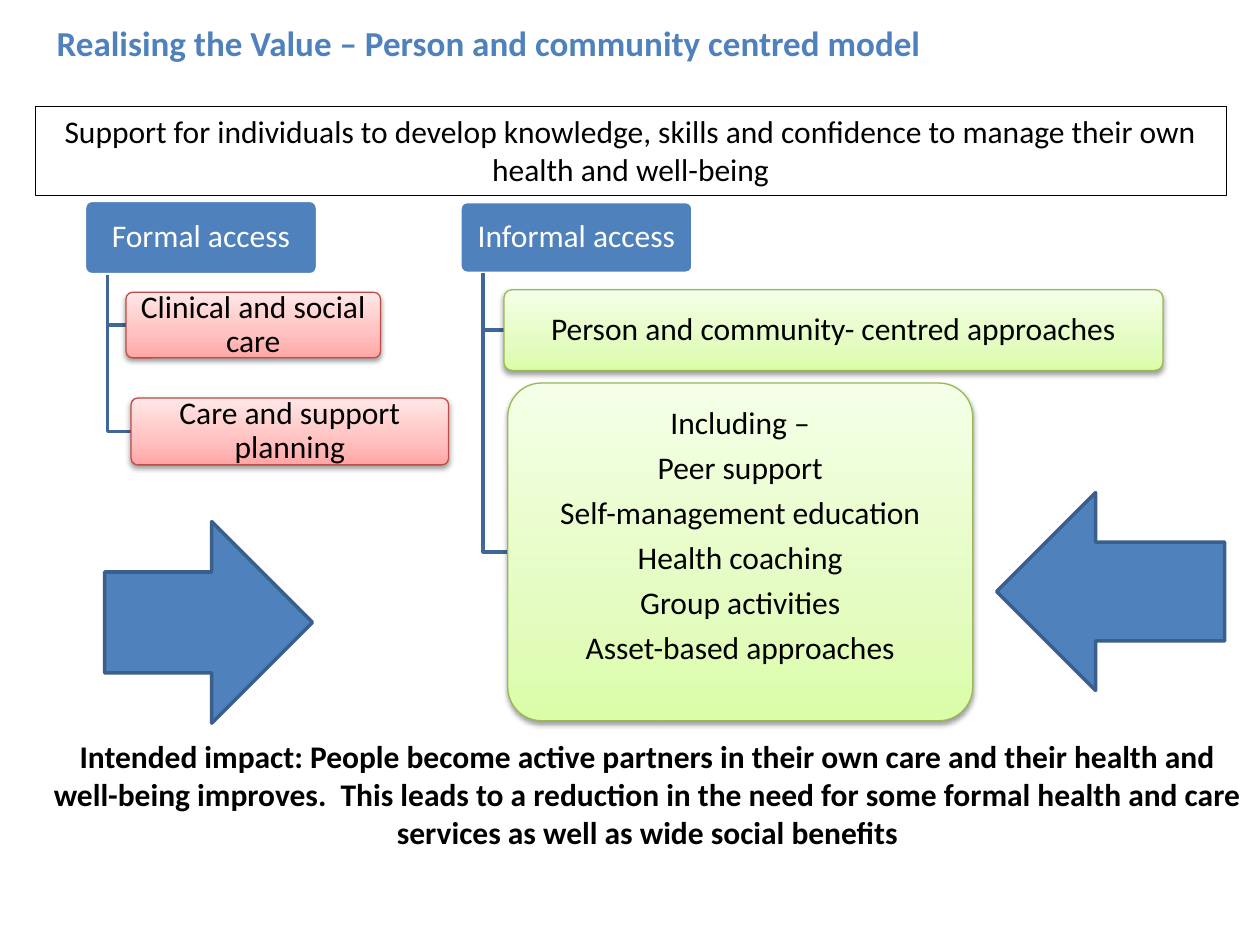
from lxml import etree
from pptx import Presentation
from pptx.dml.color import RGBColor
from pptx.enum.shapes import MSO_SHAPE
from pptx.enum.text import MSO_ANCHOR, PP_ALIGN
from pptx.oxml.ns import qn
from pptx.util import Inches, Pt

RECT, ROUND = MSO_SHAPE.RECTANGLE, MSO_SHAPE.ROUNDED_RECTANGLE
RIGHT, LEFT_ARROW = MSO_SHAPE.RIGHT_ARROW, MSO_SHAPE.LEFT_ARROW
TOP, MIDDLE = MSO_ANCHOR.TOP, MSO_ANCHOR.MIDDLE
LEFT, CENTER = PP_ALIGN.LEFT, PP_ALIGN.CENTER

THEME = {
    "font": "Calibri", "title_size": 20, "size": 18,
    "blue": "4F81BD", "blue_edge": "3A5F8C", "branch": "3F6797",
    "white": "FFFFFF", "black": "000000",
    # gradient stops run from the bottom of the box to its top
    "red": {"stops": [(0, "FFA6A5"), (35, "FFC0BF"), (100, "FFE7E7")], "edge": "BF4C48"},
    "green": {"stops": [(0, "DAFDA7"), (35, "E4FCC2"), (100, "F5FFE7")], "edge": "98B955"},
}

TITLE = "Realising the Value – Person and community centred model"
AIM = ("Support for individuals to develop knowledge, skills and confidence "
       "to manage their own health and well-being")
IMPACT = ("Intended impact: People become active partners in their own care and their "
          "health and well-being improves.  This leads to a reduction in the need for some "
          "formal health and care services as well as wide social benefits")
# Boxes are (left, top, width, height) in inches
BRANCHES = [
    {"head": "Formal access", "box": (0.67, 1.59, 1.85, 0.59), "look": "red", "children": [
        (["Clinical and social care"], (1, 2.32, 2.02, 0.52), 0.03),
        (["Care and support planning"], (1.04, 3.16, 2.52, 0.53), 0.03)]},
    {"head": "Informal access", "box": (3.65, 1.6, 1.85, 0.57), "look": "green", "children": [
        (["Person and community- centred approaches"], (4, 2.3, 5.23, 0.64), 0.03),
        (["Including –", "Peer support", "Self-management education", "Health coaching",
          "Group activities", "Asset-based approaches"], (4.03, 3.04, 3.69, 2.68), 0.27)]},
]
ARROWS = [(RIGHT, (0.83, 4.14, 1.65, 1.6)), (LEFT_ARROW, (7.91, 3.91, 1.81, 1.57))]


def rgb(name):
    return RGBColor.from_string(THEME.get(name, name))


def inches(box):
    return [Inches(v) for v in box]


def write(sp, lines, color="black", size=THEME["size"], bold=False, align=CENTER,
          anchor=TOP, insets=(0.1, 0.05, 0.1, 0.05), line=1, after=0):
    tf = sp.text_frame
    tf.word_wrap = True
    tf.vertical_anchor = anchor
    tf.margin_left, tf.margin_top, tf.margin_right, tf.margin_bottom = inches(insets)
    for i, text in enumerate(lines):
        p = tf.paragraphs[0] if i == 0 else tf.add_paragraph()
        p.alignment, p.line_spacing = align, line
        p.space_before, p.space_after = Pt(0), Pt(after)
        r = p.add_run()
        r.text = text
        r.font.name, r.font.size, r.font.bold = THEME["font"], Pt(size), bold
        r.font.color.rgb = rgb(color)


def add_shape(kind, box, fill, edge, weight):
    sp = slide.shapes.add_shape(kind, *inches(box))
    sp.shadow.inherit = False
    if fill:
        sp.fill.solid()
        sp.fill.fore_color.rgb = rgb(fill)
    else:
        sp.fill.background()
    sp.line.color.rgb, sp.line.width = rgb(edge), Pt(weight)
    if kind == ROUND:
        sp.adjustments[0] = 0.1
    return sp


def add_color(parent, color):
    return etree.SubElement(parent, qn("a:srgbClr"), val=color)


def shade(sp, stops):
    """Give the shape a vertical gradient and a soft shadow below."""
    sp.fill.gradient()
    sp.fill.gradient_angle = 90
    props = sp._element.spPr
    gs_list = props.find(".//" + qn("a:gsLst"))
    for gs in list(gs_list):
        gs_list.remove(gs)
    for share, color in stops:
        add_color(etree.SubElement(gs_list, qn("a:gs"), pos=str(share * 1000)), color)
    shadow = etree.SubElement(props.find(qn("a:effectLst")), qn("a:outerShdw"),
                              blurRad=str(Pt(3.1)), dist=str(Pt(1.6)),
                              dir="5400000", rotWithShape="0")
    etree.SubElement(add_color(shadow, THEME["black"]), qn("a:alpha"), val="38000")


def add_elbow(parent, child):
    """Run from a tenth along the parent's base to the middle of the child's left side."""
    x, y = parent[0] + parent[2] / 10, parent[1] + parent[3]
    end_x, end_y = child[0], child[1] + child[3] / 2
    pen = slide.shapes.build_freeform(Inches(x), Inches(y))
    pen.add_line_segments([inches((x, end_y)), inches((end_x, end_y))], close=False)
    sp = pen.convert_to_shape()
    sp.shadow.inherit = False
    sp.fill.background()
    sp.line.color.rgb, sp.line.width = rgb("branch"), Pt(2)


def add_node(lines, box, fill, edge, weight, color="black", bottom=0.03):
    sp = add_shape(ROUND, box, fill, edge, weight)
    write(sp, lines, color=color, anchor=MIDDLE, insets=(0.04, 0.03, 0.04, bottom),
          line=0.9, after=0.35 * THEME["size"])
    return sp


prs = Presentation()
prs.slide_width, prs.slide_height = Inches(10), Inches(7.5)
slide = prs.slides.add_slide(prs.slide_layouts[5])

title = slide.shapes.title
title.left, title.top, title.width, title.height = inches((0.35, 0.12, 7.87, 0.44))
write(title, [TITLE], color="blue", size=THEME["title_size"], bold=True, align=LEFT)

for branch in BRANCHES:
    add_node([branch["head"]], branch["box"], "blue", "white", 2, color="white")
    look = THEME[branch["look"]]
    for lines, box, bottom in branch["children"]:
        add_elbow(branch["box"], box)
        node = add_node(lines, box, None, look["edge"], 0.75, bottom=bottom)
        shade(node, look["stops"])

write(add_shape(RECT, (0.28, 0.84, 9.45, 0.71), None, "black", 0.25), [AIM])
write(slide.shapes.add_textbox(*inches((0.28, 5.8, 9.72, 1.01))), [IMPACT], bold=True)
for kind, box in ARROWS:
    add_shape(kind, box, "blue", "blue_edge", 2)

prs.save("out.pptx")
